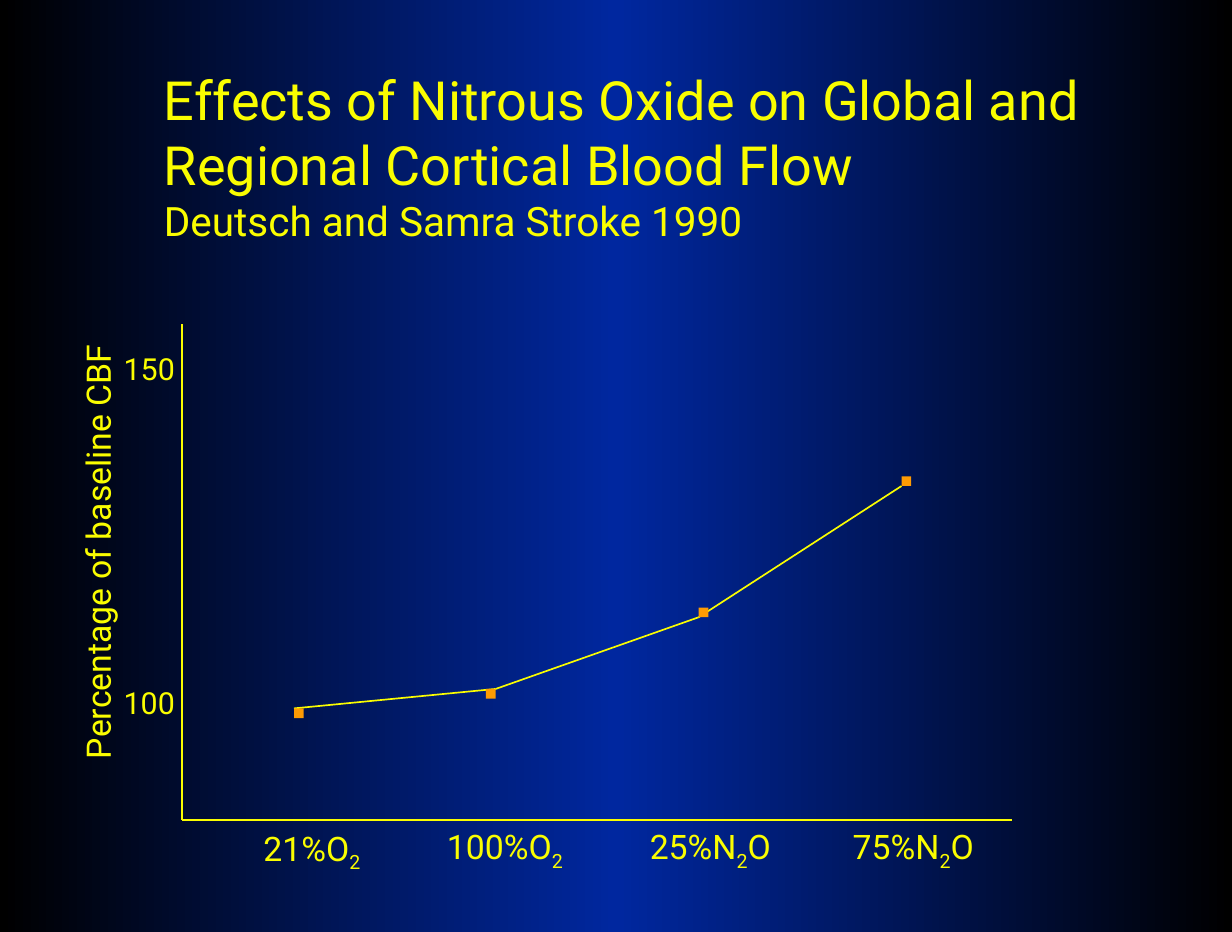
from copy import deepcopy
from itertools import pairwise

from pptx import Presentation
from pptx import util as u
from pptx.dml.color import RGBColor
from pptx.enum import shapes, text
from pptx.oxml.ns import qn
from pptx.oxml.xmlchemy import OxmlElement

HUES = {"ink": "FAFD00", "dot": "FE9B03", "edge": "000000", "mid": "00279F"}
FRAME = {"auto_size": text.MSO_AUTO_SIZE.SHAPE_TO_FIT_TEXT, "word_wrap": False}
SCALE = u.Inches(1) // 100


def px(*vals):
    return [u.Emu(v * SCALE) for v in vals]


def hue(name):
    return RGBColor.from_string(HUES[name])


class Board:
    """Draws styled elements on the current slide."""

    def __init__(self, slide):
        self.slide = slide
        self.items = slide.shapes

    def back(self, *names):
        fill = self.slide.background.fill
        fill.gradient()
        stops = self.slide.element.find(".//" + qn("a:gsLst"))
        stops.append(deepcopy(stops[0]))
        fill.gradient_angle = 0
        for i, (stop, name) in enumerate(zip(fill.gradient_stops, names)):
            stop.color.rgb = hue(name)
            stop.position = i / (len(names) - 1)

    def label(self, box, *lines, turn=0):
        item = self.items.add_textbox(*px(*box))
        item.rotation = turn
        frame = item.text_frame
        for key, val in FRAME.items():
            setattr(frame, key, val)
        for i, (line, size) in enumerate(lines):
            para = frame.add_paragraph() if i else frame.paragraphs[0]
            for j, part in enumerate(line.split("_")):
                run = para.add_run()
                run.text = part
                for key, val in {"name": "Roboto", "size": u.Pt(size)}.items():
                    setattr(run.font, key, val)
                run.font.color.rgb = hue("ink")
                if j % 2:
                    run._r.get_or_add_rPr().set("baseline", "-25000")

    def line(self, start, end):
        item = self.items.add_connector(
            shapes.MSO_CONNECTOR.STRAIGHT, *px(*start, *end))
        item.line.width = u.Pt(1)
        item.line.color.rgb = hue("ink")
        item.element.spPr.append(OxmlElement("a:effectLst"))

    def dot(self, left, top):
        item = self.items.add_shape(
            shapes.MSO_SHAPE.RECTANGLE, *px(left, top, 8, 8))
        item.shadow.inherit = False
        item.fill.solid()
        item.fill.fore_color.rgb = hue("dot")
        item.line.fill.background()


def main():
    deck = Presentation()
    deck.slide_width, deck.slide_height = px(1014, 767)
    board = Board(deck.slides.add_slide(deck.slide_layouts[6]))
    board.back("edge", "mid", "edge")

    board.label((125, 50, 775, 157),
                ("Effects of Nitrous Oxide on Global and", 32),
                ("Regional Cortical Blood Flow", 32),
                ("Deutsch and Samra Stroke 1990", 24))

    corner = (150, 675)
    board.line((150, 267), corner)
    board.line(corner, (833, 675))
    board.label((-104, 429, 368, 43), ("Percentage of baseline CBF", 20), turn=270)
    for tick, top in (("150", 283), ("100", 558)):
        board.label((92, top, 64, 40), (tick, 18))

    gases = (("21%O_2", 207, 676, 107), ("100%O_2", 358, 675, 123),
             ("25%N_2_O", 525, 675, 127), ("75%N_2_O", 692, 675, 127))
    for gas, left, top, wide in gases:
        board.label((left, top, wide, 43), (gas, 20))

    for start, end in pairwise([(242, 583), (408, 567), (575, 508), (742, 400)]):
        board.line(start, end)
    for spot in ((242, 583), (400, 567), (575, 500), (742, 392)):
        board.dot(*spot)

    deck.save("out.pptx")


if __name__ == "__main__":
    main()
